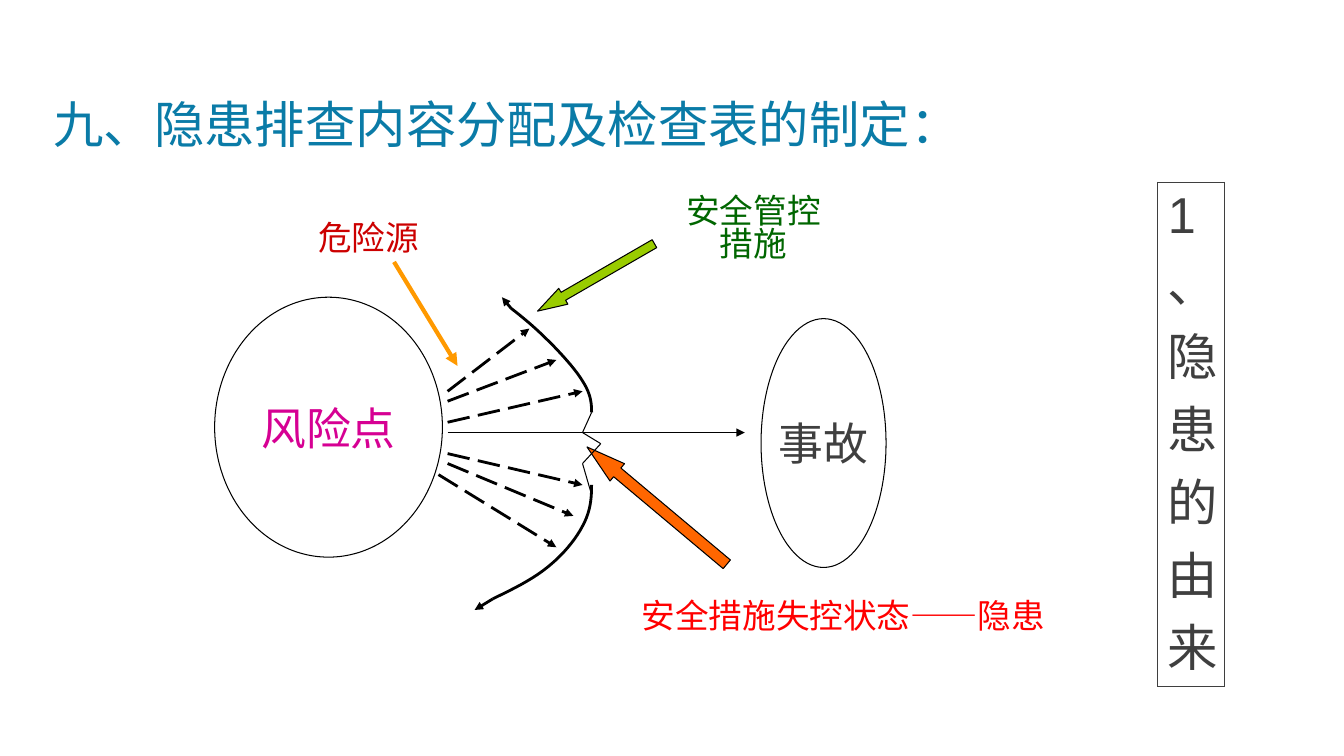
from itertools import pairwise
from pptx import Presentation
from pptx.dml.color import RGBColor
from pptx.enum.dml import MSO_LINE as Dash
from pptx.enum.shapes import MSO_CONNECTOR as Link, MSO_SHAPE as Kind
from pptx.enum.text import MSO_ANCHOR as Anchor, PP_ALIGN as Align
from pptx.oxml.ns import qn
from pptx.util import Cm, Pt
from lxml.etree import SubElement as Sub

BLACK = RGBColor(0x00, 0x00, 0x00)
WHITE = RGBColor(0xFF, 0xFF, 0xFF)
GREY = RGBColor(0x3F, 0x3F, 0x3F)
BLUE = RGBColor(0x0A, 0x7B, 0xA7)
PINK = RGBColor(0xD6, 0x00, 0x93)
LIME = RGBColor(0x99, 0xCC, 0x00)
GREEN = RGBColor(0x00, 0x66, 0x00)
AMBER = RGBColor(0xFF, 0x99, 0x00)
ORANGE = RGBColor(0xFF, 0x66, 0x00)
RED = RGBColor(0xFF, 0x00, 0x00)
DARK_RED = RGBColor(0xCC, 0x00, 0x00)
LATIN = "Arial"
HAN = "Noto Sans CJK SC"

deck = Presentation()
deck.slide_width, deck.slide_height = Cm(33.87), Cm(19.05)
slide = deck.slides.add_slide(deck.slide_layouts[5])
shapes = slide.shapes


def write(frame, text, size, color, face, align=Align.CENTER):
    frame.text = text
    para = frame.paragraphs[0]
    para.alignment = align
    font = para.runs[0].font
    font.size, font.name = Pt(size), face
    font.color.rgb = color
    Sub(font._element, qn("a:ea"), typeface=HAN)
    return para


def draw(ends, width, color=BLACK, head=True, dash=None):
    link = shapes.add_connector(Link.STRAIGHT, *map(Cm, ends))
    link.line.color.rgb = color
    link.line.width = Pt(width)
    if dash:
        link.line.dash_style = dash
    if head:
        Sub(link.line._get_or_add_ln(), qn("a:tailEnd"), type="triangle")
    Sub(link._element.spPr, qn("a:effectLst"))


title = shapes.title
title.left, title.top, title.width, title.height = map(Cm, (1.09, 1.73, 27.66, 2.97))
title.text_frame.vertical_anchor = Anchor.MIDDLE
para = write(title.text_frame, "九、隐患排查内容分配及检查表的制定：", 36, BLUE, LATIN, Align.LEFT)
para.line_spacing = 0.9

table = shapes.add_table(1, 1, *map(Cm, (29.18, 4.6, 1.68, 10.24))).table
table.first_row = table.horz_banding = False
cell = table.cell(0, 0)
write(cell.text_frame, "1、隐患的由来", 36, GREY, LATIN, Align.LEFT)
props = cell._tc.get_or_add_tcPr()
for side in ("lnL", "lnR", "lnT", "lnB"):
    edge = Sub(props, qn("a:" + side), w=str(Pt(1)))
    Sub(Sub(edge, qn("a:solidFill")), qn("a:srgbClr"), val=str(GREY))
cell.fill.background()

for text, color, box in (
    ("风险点", PINK, (5.41, 7.49, 5.74, 6.55)),
    ("事故", GREY, (19.18, 8.03, 3.15, 6.27)),
):
    oval = shapes.add_shape(Kind.OVAL, *map(Cm, box))
    oval.shadow.inherit = False
    oval.fill.solid()
    oval.fill.fore_color.rgb = WHITE
    oval.line.color.rgb = BLACK
    oval.line.width = Pt(0.75)
    frame = oval.text_frame
    frame.word_wrap = False
    frame.vertical_anchor = Anchor.MIDDLE
    write(frame, text, 32, color, HAN)

draw((11.28, 10.9, 18.77, 10.9), 0.75)
for ray in (
    (11.28, 9.86, 13.34, 8.28),
    (11.28, 10.11, 14.02, 9.07),
    (11.28, 10.64, 14.68, 9.86),
    (11.28, 11.43, 14.68, 12.22),
    (11.28, 11.68, 14.45, 13),
    (11.05, 11.96, 14.02, 13.79),
):
    draw(ray, 2, dash=Dash.LONG_DASH)

for color, turn, ratio, box in (
    (LIME, 240, 1.63, (14.79, 5.29, 0.46, 3.4)),
    (ORANGE, 310, 1.75, (16.27, 10.44, 0.57, 4.6)),
):
    arrow = shapes.add_shape(Kind.UP_ARROW, *map(Cm, box))
    arrow.shadow.inherit = False
    arrow.rotation = turn
    arrow.adjustments[0], arrow.adjustments[1] = 0.5, ratio
    arrow.fill.solid()
    arrow.fill.fore_color.rgb = color
    arrow.line.color.rgb = BLACK
    arrow.line.width = Pt(0.75)

STEPS = 10
for knots, tip in (
    (((14.91, 12.22), (14.91, 12.57), (14.88, 12.9), (14.68, 13.26), (14.5, 13.61),
      (14.17, 14), (13.79, 14.3), (13.41, 14.61), (12.9, 14.86), (12.42, 15.09)),
     (11.96, 15.37)),
    (((14.91, 10.39), (14.91, 10.13), (14.88, 9.91), (14.68, 9.6), (14.5, 9.3),
      (14.1, 8.86), (13.79, 8.56), (13.49, 8.26), (13.18, 8), (12.88, 7.77)),
     (12.65, 7.49)),
):
    points = []
    for start in range(0, len(knots) - 1, 3):
        for step in range(1, STEPS + 1):
            t = step / STEPS
            parts = ((1 - t) ** 3, 3 * t * (1 - t) ** 2, 3 * t * t * (1 - t), t ** 3)
            quad = knots[start:start + 4]
            points.append([Cm(sum(p * k[axis] for p, k in zip(parts, quad))) for axis in (0, 1)])
    pen = shapes.build_freeform(*map(Cm, knots[0]))
    pen.add_line_segments(points, close=False)
    arc = pen.convert_to_shape()
    arc.shadow.inherit = False
    arc.fill.background()
    arc.line.color.rgb = BLACK
    arc.line.width = Pt(2)
    draw(knots[-1] + tip, 2)

gap = ((14.91, 10.39), (14.68, 10.9), (15.14, 11.18), (14.68, 11.68), (14.91, 12.47))
for start, end in pairwise(gap):
    draw(start + end, 0.75, head=False)
draw((9.93, 6.6, 11.53, 9.22), 3, AMBER)

for text, color, face, space, box in (
    ("安全管控措施", GREEN, HAN, 0.83, (16.74, 4.88, 4.5, 1.83)),
    ("安全措施失控状态——隐患", RED, HAN, 1, (15.72, 14.83, 11.07, 1.32)),
    ("危险源", DARK_RED, LATIN, 1, (7.04, 5.31, 4.5, 1.32)),
):
    frame = shapes.add_textbox(*map(Cm, box)).text_frame
    frame.word_wrap = True
    frame.vertical_anchor = Anchor.MIDDLE
    frame.margin_left = frame.margin_right = Cm(0.2)
    frame.margin_top = frame.margin_bottom = Cm(0.1)
    write(frame, text, 24, color, face).line_spacing = space

deck.save("out.pptx")
